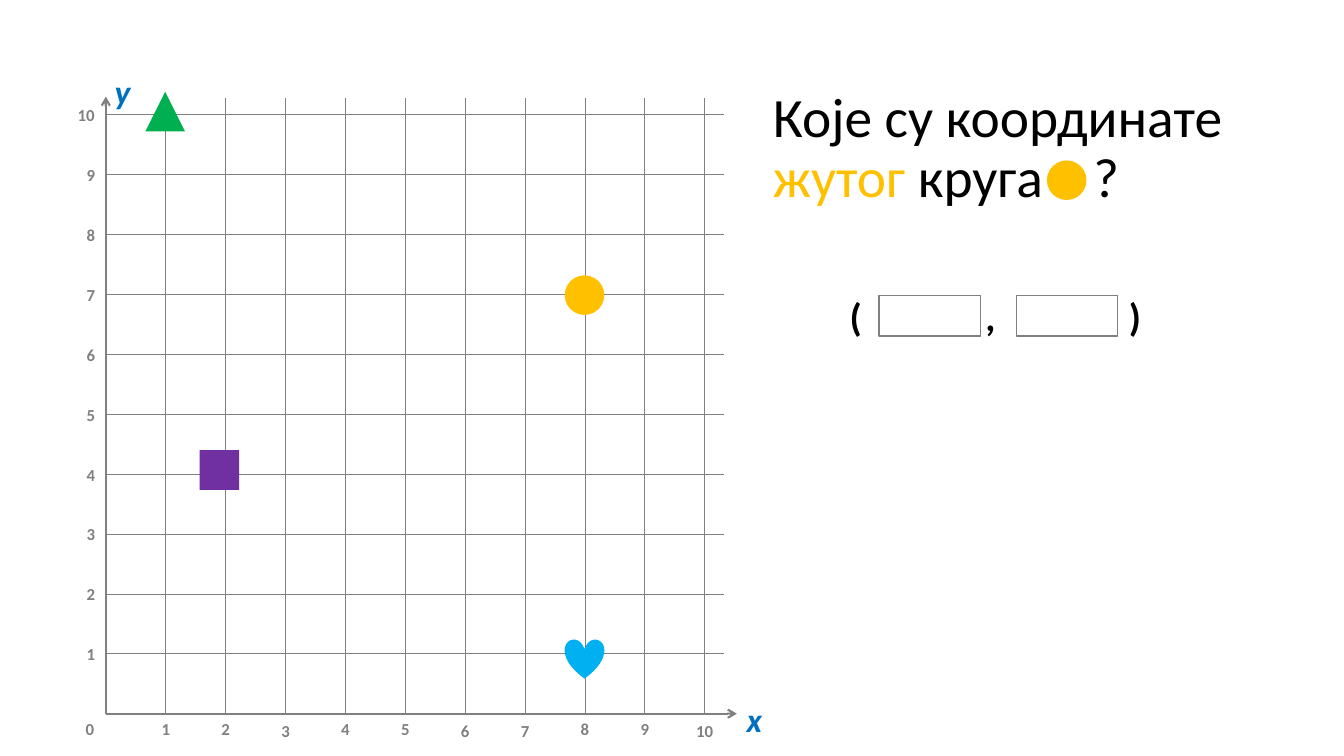
from dataclasses import dataclass

from lxml.etree import SubElement
from pptx import Presentation
from pptx.dml.color import RGBColor
from pptx.enum.shapes import MSO_CONNECTOR, MSO_SHAPE
from pptx.enum.text import MSO_ANCHOR, PP_ALIGN
from pptx.oxml.ns import qn
from pptx.util import Pt

COLORS = {
    "black": "000000", "grey": "808080", "axis_name": "0070C0", "yellow": "FFC000",
    "blue": "00B0F0", "purple": "7030A0", "green": "00B050",
}
FONT = "Calibri"
ORIGIN_X, ORIGIN_Y = 75.6, 509.8
STEP = 42.78
GRID_RIGHT, GRID_TOP = 517, 70
AXIS_RIGHT, AXIS_TOP = 526.3, 69.1
UNITS = range(1, 11)
LOWERED_LABELS = {3, 6, 7, 10}
LABEL_H = 21.8
MARKER = 28.3


@dataclass
class Box:
    x: float
    y: float
    w: float
    h: float


@dataclass
class Style:
    size: float
    color: str = "black"
    bold: bool = False
    italic: bool = False


@dataclass
class Marker:
    shape: MSO_SHAPE
    x: float
    y: float
    color: str


MARKERS = [
    Marker(MSO_SHAPE.HEART, 403.4, 456.5, "blue"),
    Marker(MSO_SHAPE.RECTANGLE, 142.6, 321.6, "purple"),
    Marker(MSO_SHAPE.ISOSCELES_TRIANGLE, 103.9, 65.5, "green"),
    Marker(MSO_SHAPE.OVAL, 403.4, 196.7, "yellow"),
    Marker(MSO_SHAPE.OVAL, 747.8, 114.6, "yellow"),
]
ANSWER_BOXES = [Box(628, 211, 72.2, 28.9), Box(726, 211, 72.2, 28.9)]


def rgb(name: str) -> RGBColor:
    return RGBColor.from_string(COLORS[name])


def add_line(s, x1: float, y1: float, x2: float, y2: float, width: float, arrow: bool = False) -> None:
    line = s.shapes.add_connector(MSO_CONNECTOR.STRAIGHT, Pt(x1), Pt(y1), Pt(x2), Pt(y2))
    line.line.color.rgb = rgb("grey")
    line.line.width = Pt(width)
    if arrow:
        SubElement(line.line._get_or_add_ln(), qn("a:tailEnd"), type="arrow")
    SubElement(line._element.spPr, qn("a:effectLst"))


def add_shape(s, shape: MSO_SHAPE, box: Box, fill: str = "", outline: str = "") -> None:
    sp = s.shapes.add_shape(shape, Pt(box.x), Pt(box.y), Pt(box.w), Pt(box.h))
    sp.shadow.inherit = False
    if fill:
        sp.fill.solid()
        sp.fill.fore_color.rgb = rgb(fill)
    else:
        sp.fill.background()
    if outline:
        sp.line.color.rgb = rgb(outline)
        sp.line.width = Pt(1)
    else:
        sp.line.fill.background()


def add_text(s, box: Box, runs: list[tuple[str, Style]], wrap: bool = True,
             align: PP_ALIGN = PP_ALIGN.LEFT, tabs: tuple[float, ...] = ()):
    """Add a one-paragraph text box; tabs are left tab stops in points."""
    sp = s.shapes.add_textbox(Pt(box.x), Pt(box.y), Pt(box.w), Pt(box.h))
    tf = sp.text_frame
    tf.word_wrap = wrap
    p = tf.paragraphs[0]
    p.alignment = align
    if tabs:
        tab_list = SubElement(p._p.get_or_add_pPr(), qn("a:tabLst"))
        for pos in tabs:
            SubElement(tab_list, qn("a:tab"), pos=str(Pt(pos)), algn="l")
    for text, style in runs:
        r = p.add_run()
        r.text = text
        r.font.name = FONT
        r.font.size = Pt(style.size)
        r.font.bold = style.bold
        r.font.italic = style.italic
        r.font.color.rgb = rgb(style.color)
    return tf


def add_label(s, value: int, center_x: float, y: float) -> None:
    width = 26.6 if value > 9 else 20.2
    add_text(s, Box(center_x - width / 2, y, width, LABEL_H),
             [(str(value), Style(12, "grey", bold=True))], wrap=False, align=PP_ALIGN.CENTER)


def add_grid(s) -> None:
    add_line(s, ORIGIN_X, ORIGIN_Y, AXIS_RIGHT, ORIGIN_Y, 1.5, arrow=True)
    add_line(s, ORIGIN_X, ORIGIN_Y, ORIGIN_X, AXIS_TOP, 1.5, arrow=True)
    add_label(s, 0, 64.2, ORIGIN_Y)
    for n in UNITS:
        x, y = ORIGIN_X + n * STEP, ORIGIN_Y - n * STEP
        add_line(s, ORIGIN_X, y, GRID_RIGHT, y, 0.5)
        add_line(s, x, ORIGIN_Y, x, GRID_TOP, 0.5)
        add_label(s, n, x, ORIGIN_Y + (1.4 if n in LOWERED_LABELS else 0))
        add_label(s, n, 61.6 if n > 9 else 64.8, y - 10.6)
    axis_name = Style(24, "axis_name", bold=True, italic=True)
    add_text(s, Box(526.3, 495.4, 31, 36), [("x", axis_name)])
    add_text(s, Box(74.9, 46.8, 31, 36), [("y", axis_name)])


def add_question(s) -> None:
    tf = add_text(s, Box(545, 56.2, 376.6, 100.8), [
        ("Које су координате ", Style(39.6)),
        ("жутог ", Style(39.6, "yellow")),
        ("круга\t?", Style(39.6)),
    ], tabs=(229,))
    tf.vertical_anchor = MSO_ANCHOR.MIDDLE
    tf.paragraphs[0].line_spacing = 0.9
    add_text(s, Box(599.8, 205.2, 223.2, 41), [("(\t,\t)", Style(28, bold=True))], tabs=(97, 199.5))
    for box in ANSWER_BOXES:
        add_shape(s, MSO_SHAPE.RECTANGLE, box, outline="grey")


def main() -> None:
    prs = Presentation()
    prs.slide_width, prs.slide_height = Pt(960), Pt(540)
    s = prs.slides.add_slide(prs.slide_layouts[6])
    add_grid(s)
    add_question(s)
    for m in MARKERS:
        add_shape(s, m.shape, Box(m.x, m.y, MARKER, MARKER), fill=m.color)
    prs.save("out.pptx")


if __name__ == "__main__":
    main()
